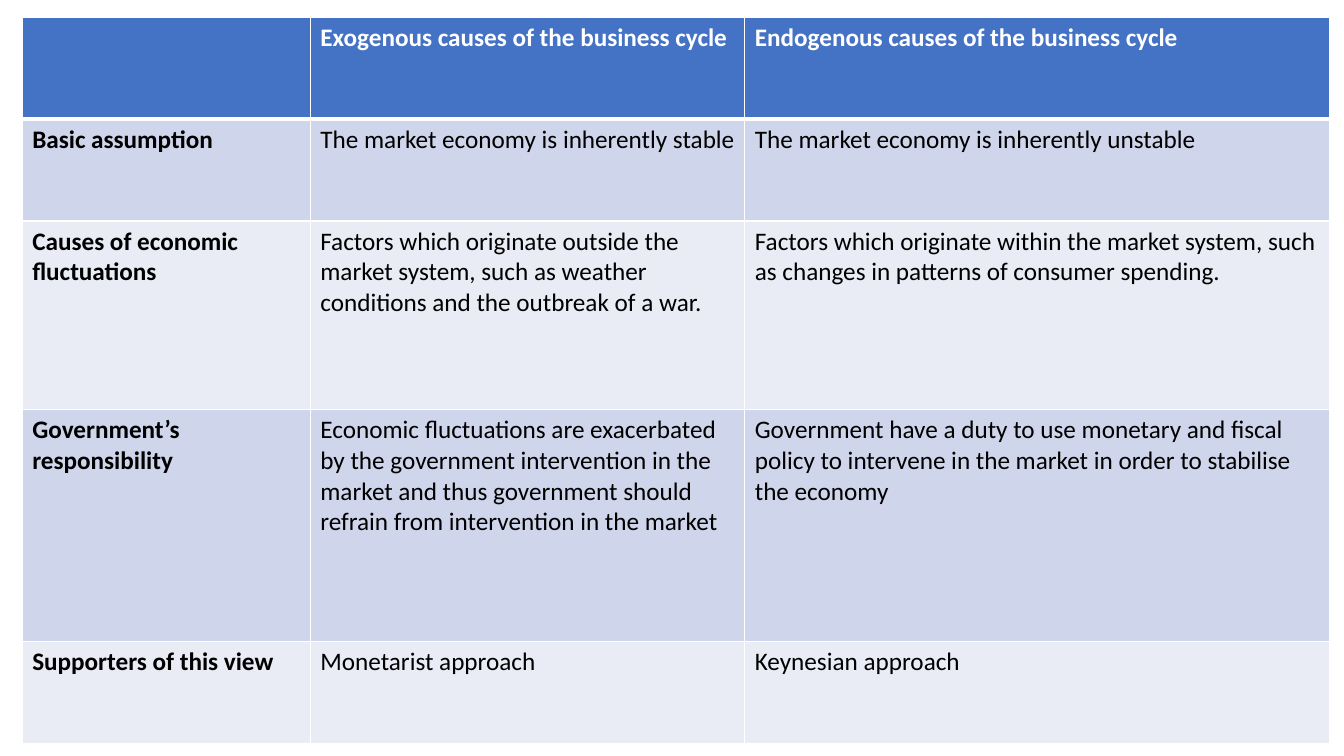
"""Build a slide comparing exogenous and endogenous causes of the business cycle."""
from dataclasses import dataclass

from lxml.etree import SubElement
from pptx import Presentation
from pptx.dml.color import RGBColor as RGB
from pptx.oxml.ns import qn
from pptx.util import Cm, Pt


@dataclass(frozen=True)
class Theme:
    font: str = "Calibri"
    size: int = 18
    header: str = "4472C4"
    bands: tuple = ("CFD5EA", "E9EBF5")
    light: str = "FFFFFF"
    dark: str = "000000"
    rule: int = 1
    header_rule: int = 3


THEME = Theme()
COL_WIDTHS = (7.26, 10.95, 14.73)
ROW_HEIGHTS = (2.57, 2.57, 4.75, 5.84, 2.57)
ROWS = (
    ("", "Exogenous causes of the business cycle",
     "Endogenous causes of the business cycle"),
    ("Basic assumption", "The market economy is inherently stable",
     "The market economy is inherently unstable"),
    ("Causes of economic fluctuations",
     "Factors which originate outside the market system, such as weather "
     "conditions and the outbreak of a war.",
     "Factors which originate within the market system, such as changes in "
     "patterns of consumer spending."),
    ("Government’s responsibility",
     "Economic fluctuations are exacerbated by the government intervention in "
     "the market and thus government should refrain from intervention in the market",
     "Government have a duty to use monetary and fiscal policy to intervene in "
     "the market in order to stabilise the economy"),
    ("Supporters of this view", "Monetarist approach", "Keynesian approach"),
)


def set_borders(cell, top, bottom):
    """Draw the four cell borders, with widths in points for top and bottom."""
    tc_pr = cell._tc.get_or_add_tcPr()
    widths = {"L": THEME.rule, "R": THEME.rule, "T": top, "B": bottom}
    for side, width in widths.items():
        ln = SubElement(tc_pr, qn(f"a:ln{side}"), w=str(Pt(width)))
        fill = SubElement(ln, qn("a:solidFill"))
        SubElement(fill, qn("a:srgbClr"), val=THEME.light)


def fill_cell(cell, text, fill, color, bold):
    """Set the text, its font and the fill of a cell."""
    cell.fill.solid()
    cell.fill.fore_color.rgb = RGB.from_string(fill)
    cell.text_frame.text = text
    p = cell.text_frame.paragraphs[0]
    p.font.size = Pt(THEME.size)
    for r in p.runs:
        r.font.name = THEME.font
        r.font.size = Pt(THEME.size)
        r.font.bold = bold
        r.font.color.rgb = RGB.from_string(color)


def add_comparison_table(slide):
    """Add the table with a header row, a bold first column and banded rows."""
    frame = slide.shapes.add_table(
        len(ROWS), len(COL_WIDTHS), Cm(0.56), Cm(0.43),
        Cm(sum(COL_WIDTHS)), Cm(sum(ROW_HEIGHTS)))
    table = frame.table
    for column, width in zip(table.columns, COL_WIDTHS):
        column.width = Cm(width)
    for i, (row, height) in enumerate(zip(table.rows, ROW_HEIGHTS)):
        row.height = Cm(height)
        is_header = i == 0
        fill = THEME.header if is_header else THEME.bands[(i - 1) % 2]
        color = THEME.light if is_header else THEME.dark
        top = THEME.header_rule if i == 1 else THEME.rule
        bottom = THEME.header_rule if is_header else THEME.rule
        for j, text in enumerate(ROWS[i]):
            cell = table.cell(i, j)
            set_borders(cell, top, bottom)
            fill_cell(cell, text, fill, color, is_header or j == 0)


def main():
    """Create the presentation and save it."""
    prs = Presentation()
    prs.slide_width, prs.slide_height = Cm(33.87), Cm(19.05)
    slide = prs.slides.add_slide(prs.slide_layouts[6])
    add_comparison_table(slide)
    prs.save("out.pptx")


if __name__ == "__main__":
    main()
